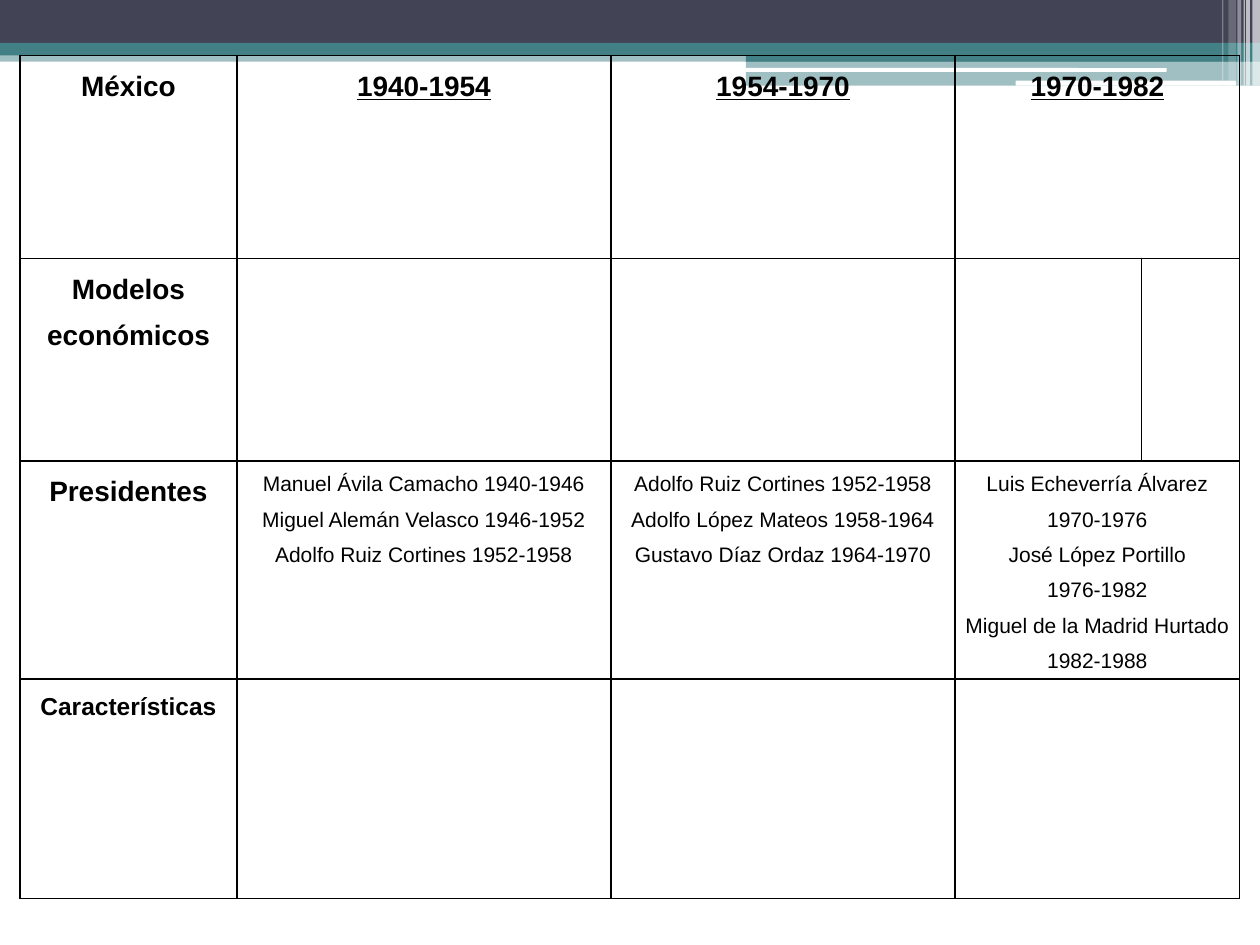
from lxml.etree import SubElement
from pptx import Presentation
from pptx.dml.color import RGBColor
from pptx.enum.shapes import MSO_SHAPE
from pptx.enum.text import PP_ALIGN
from pptx.oxml.ns import qn
from pptx.util import Inches, Pt

BLACK = RGBColor(0x00, 0x00, 0x00)
WHITE = RGBColor(0xFF, 0xFF, 0xFF)
SLATE = RGBColor(0x42, 0x44, 0x56)
TEAL = RGBColor(0x43, 0x80, 0x86)

# left, top, width, height, colour, opacity in percent
BANDS = [
    (0, 0.4, 10, 0.09, TEAL, 50),
    (0, 0, 10, 0.34, SLATE, 100),
    (0, 0.34, 10, 0.1, TEAL, 100),
    (5.92, 0.39, 4.08, 0.1, TEAL, 100),
    (5.92, 0.48, 4.08, 0.2, TEAL, 50),
]
ROUNDED_BARS = [(5.91, 0.54, 3.35, 0.03), (8.06, 0.64, 1.75, 0.04)]
# left, width, height, opacity in percent
STRIPES = [
    (9.94, 0.06, 0.68, 65),
    (9.89, 0.03, 0.68, 65),
    (9.87, 0.01, 0.68, 60),
    (9.82, 0.03, 0.68, 40),
    (9.75, 0.06, 0.64, 20),
    (9.7, 0.01, 0.64, 30),
]

COLUMN_WIDTHS = [1.72, 2.97, 2.73, 1.48, 0.78]
ROW_HEIGHTS = [1.61, 1.61, 1.73, 1.74]
MERGED_ROWS = [0, 2, 3]

HEADING = {"size": Pt(16), "bold": True}
PERIOD = {**HEADING, "underline": True}
SMALL_HEADING = {"size": Pt(14), "bold": True}
NAMES = {"size": Pt(12), "bold": False}

# (row, column): (font format, paragraphs)
CONTENT = {
    (0, 0): (HEADING, ["México"]),
    (0, 1): (PERIOD, ["1940-1954"]),
    (0, 2): (PERIOD, ["1954-1970"]),
    (0, 3): (PERIOD, ["1970-1982"]),
    (1, 0): (HEADING, ["Modelos económicos"]),
    (2, 0): (HEADING, ["Presidentes"]),
    (2, 1): (NAMES, ["Manuel Ávila Camacho 1940-1946",
                     "Miguel Alemán Velasco 1946-1952",
                     "Adolfo Ruiz Cortines 1952-1958"]),
    (2, 2): (NAMES, ["Adolfo Ruiz Cortines 1952-1958",
                     "Adolfo López Mateos 1958-1964",
                     "Gustavo Díaz Ordaz 1964-1970"]),
    (2, 3): (NAMES, ["Luis Echeverría Álvarez 1970-1976",
                     "José López Portillo",
                     "1976-1982",
                     "Miguel de la Madrid Hurtado 1982-1988"]),
    (3, 0): (SMALL_HEADING, ["Características"]),
}


def add_bar(page, left, top, width, height, colour, opacity=100,
            kind=MSO_SHAPE.RECTANGLE):
    bar = page.shapes.add_shape(
        kind, Inches(left), Inches(top), Inches(width), Inches(height))
    bar.shadow.inherit = False
    bar.line.fill.background()
    bar.fill.solid()
    bar.fill.fore_color.rgb = colour
    if opacity < 100:
        colour_node = bar.fill._xPr.find(qn("a:solidFill"))[0]
        SubElement(colour_node, qn("a:alpha"), val=str(opacity * 1000))
    return bar


def add_header(page):
    for band in BANDS:
        add_bar(page, *band)
    for place in ROUNDED_BARS:
        add_bar(page, *place, WHITE, kind=MSO_SHAPE.ROUNDED_RECTANGLE)
    for left, width, height, opacity in STRIPES:
        add_bar(page, left, 0, width, height, WHITE, opacity)


def format_cell(cell):
    """Give the cell thin black borders, narrow margins and no fill."""
    margins = {"margin_left": 0.07, "margin_right": 0.07,
               "margin_top": 0, "margin_bottom": 0}
    for name, value in margins.items():
        setattr(cell, name, Inches(value))
    properties = cell._tc.get_or_add_tcPr()
    for side in ("lnL", "lnR", "lnT", "lnB"):
        border = SubElement(properties, qn(f"a:{side}"), w=str(Pt(1)))
        fill = SubElement(border, qn("a:solidFill"))
        SubElement(fill, qn("a:srgbClr"), val=str(BLACK))
    cell.fill.background()


def write_cell(cell, font_format, lines):
    frame = cell.text_frame
    frame.text = "\n".join(lines)
    for para in frame.paragraphs:
        para.alignment = PP_ALIGN.CENTER
        para.line_spacing = 1.5
        for span in para.runs:
            span.font.color.rgb = BLACK
            for name, value in {"name": "Arial", **font_format}.items():
                setattr(span.font, name, value)


def add_periods_table(page):
    table = page.shapes.add_table(
        len(ROW_HEIGHTS), len(COLUMN_WIDTHS), Inches(0.16), Inches(0.44),
        Inches(sum(COLUMN_WIDTHS)), Inches(sum(ROW_HEIGHTS))).table
    table.first_row = False
    table.horz_banding = False
    for column, width in zip(table.columns, COLUMN_WIDTHS):
        column.width = Inches(width)
    for row, height in zip(table.rows, ROW_HEIGHTS):
        row.height = Inches(height)
    for cell in table.iter_cells():
        format_cell(cell)
    for row in MERGED_ROWS:
        table.cell(row, 3).merge(table.cell(row, 4))
    for (row, column), (font_format, lines) in CONTENT.items():
        write_cell(table.cell(row, column), font_format, lines)


def main():
    deck = Presentation()
    deck.slide_width = Inches(10)
    deck.slide_height = Inches(7.5)
    page = deck.slides.add_slide(deck.slide_layouts[6])
    add_header(page)
    add_periods_table(page)
    deck.save("out.pptx")


if __name__ == "__main__":
    main()
